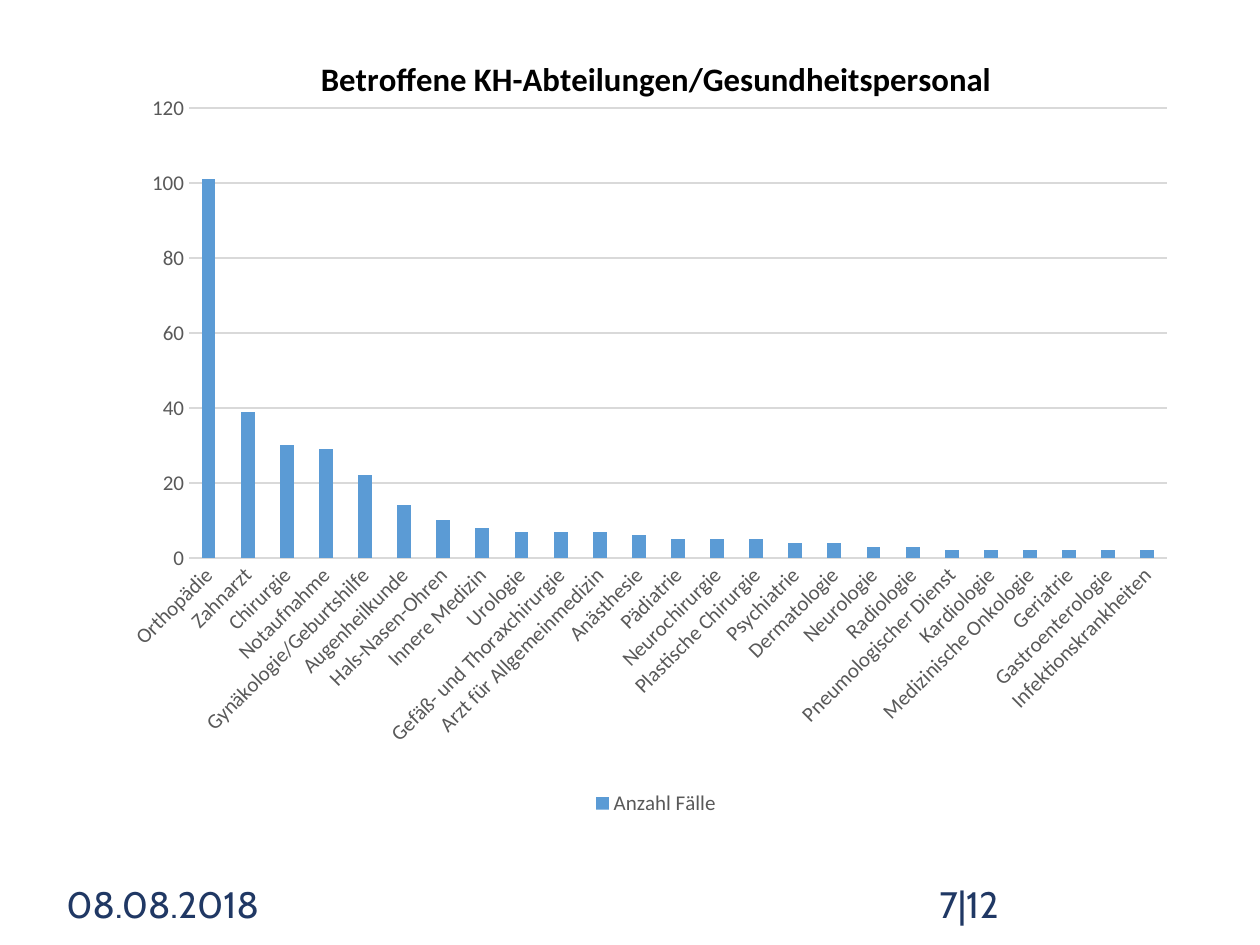
from dataclasses import dataclass

from lxml.etree import SubElement
from pptx import Presentation
from pptx.chart.data import CategoryChartData
from pptx.dml.color import RGBColor
from pptx.enum.chart import XL_CHART_TYPE, XL_LEGEND_POSITION, XL_TICK_MARK
from pptx.enum.text import MSO_ANCHOR
from pptx.oxml import parse_xml
from pptx.oxml.ns import nsdecls, qn
from pptx.util import Pt

EMU_PER_PX = 914400 / 126
CHART_WIDTH = 1140
CHART_HEIGHT = 793
NAVY = RGBColor(0x20, 0x38, 0x64)
BLUE = RGBColor(0x5B, 0x9B, 0xD5)
GRAY = RGBColor(0x59, 0x59, 0x59)
PALE = RGBColor(0xD9, 0xD9, 0xD9)
BLACK = RGBColor(0, 0, 0)

FOOTER_FONT = {"name": "Cabin", "size": Pt(21), "color": NAVY}
LABEL_FONT = {"name": "Calibri", "size": Pt(12), "color": GRAY}
TITLE_FONT = {"name": "Calibri", "size": Pt(18.7), "bold": True, "color": BLACK}

CASES = {
    "Orthopädie": 101,
    "Zahnarzt": 39,
    "Chirurgie": 30,
    "Notaufnahme": 29,
    "Gynäkologie/Geburtshilfe": 22,
    "Augenheilkunde": 14,
    "Hals-Nasen-Ohren": 10,
    "Innere Medizin": 8,
    "Urologie": 7,
    "Gefäß- und Thoraxchirurgie": 7,
    "Arzt für Allgemeinmedizin": 7,
    "Anästhesie": 6,
    "Pädiatrie": 5,
    "Neurochirurgie": 5,
    "Plastische Chirurgie": 5,
    "Psychiatrie": 4,
    "Dermatologie": 4,
    "Neurologie": 3,
    "Radiologie": 3,
    "Pneumologischer Dienst": 2,
    "Kardiologie": 2,
    "Medizinische Onkologie": 2,
    "Geriatrie": 2,
    "Gastroenterologie": 2,
    "Infektionskrankheiten": 2,
}


@dataclass(frozen=True)
class Footer:
    """A footer text and its left edge in px."""

    text: str
    left: int


FOOTERS = [Footer("08.08.2018", 54), Footer("7|12", 927)]


def px(length: int) -> int:
    """Turn px into EMU."""
    return round(length * EMU_PER_PX)


def format_font(font, values: dict) -> None:
    """Apply a dict of format values to a font."""
    for name, value in values.items():
        if name == "color":
            font.color.rgb = value
        else:
            setattr(font, name, value)


def add_footer(page, footer: Footer) -> None:
    """Add one footer text box."""
    box = page.shapes.add_textbox(px(footer.left), px(876), px(284), px(50))
    frame = box.text_frame
    frame.word_wrap = True
    frame.vertical_anchor = MSO_ANCHOR.TOP
    span = frame.paragraphs[0].add_run()
    span.text = footer.text
    format_font(span.font, FOOTER_FONT)


def set_layout(parent, index: int, lengths: dict[str, int]) -> None:
    """Place a chart part by lengths in px within the chart."""
    for old in parent.findall(qn("c:layout")):
        parent.remove(old)
    layout = parse_xml(f"<c:layout {nsdecls('c')}><c:manualLayout/></c:layout>")
    values = {"layoutTarget": "inner"} if "w" in lengths else {}
    values |= {"xMode": "edge", "yMode": "edge"}
    for name, length in lengths.items():
        values[name] = length / (CHART_WIDTH if name in "xw" else CHART_HEIGHT)
    for name, value in values.items():
        SubElement(layout[0], qn(f"c:{name}")).set("val", str(value))
    parent.insert(index, layout)


def format_axes(chart) -> None:
    """Format both axes, the gridlines and the slanted labels."""
    for axis in (chart.category_axis, chart.value_axis):
        axis.major_tick_mark = axis.minor_tick_mark = XL_TICK_MARK.NONE
        format_font(axis.tick_labels.font, LABEL_FONT)
    chart.value_axis.maximum_scale = 120
    chart.value_axis.minimum_scale = 0
    chart.value_axis.major_unit = 20
    chart.value_axis.has_major_gridlines = True
    chart.value_axis.format.line.fill.background()
    for line in (chart.category_axis.format.line, chart.value_axis.major_gridlines.format.line):
        line.color.rgb = PALE
        line.width = Pt(0.75)
    labels = chart.category_axis._element.find(qn("c:txPr"))
    labels.find(qn("a:bodyPr")).set("rot", "-2700000")


def add_case_chart(page) -> None:
    """Add the column chart of cases per department."""
    data = CategoryChartData()
    data.categories = list(CASES)
    data.add_series("Anzahl Fälle", list(CASES.values()))
    chart = page.shapes.add_chart(
        XL_CHART_TYPE.COLUMN_CLUSTERED, px(86), px(28), px(CHART_WIDTH), px(CHART_HEIGHT), data
    ).chart
    format_font(chart.font, {"name": "Calibri", "size": Pt(10), "color": BLACK})

    chart.has_title = True
    para = chart.chart_title.text_frame.paragraphs[0]
    span = para.add_run()
    span.text = "Betroffene KH-Abteilungen/Gesundheitspersonal"
    format_font(span.font, TITLE_FONT)
    set_layout(chart.chart_title._element, 1, {"x": 229, "y": 22})

    plot = chart.plots[0]
    plot.gap_width = 182
    plot.vary_by_categories = False
    fill = plot.series[0].format.fill
    fill.solid()
    fill.fore_color.rgb = BLUE
    format_axes(chart)
    plot_area = chart._chartSpace.chart.plotArea
    set_layout(plot_area, 0, {"x": 103, "y": 80, "w": 978, "h": 450})

    chart.has_legend = True
    chart.legend.position = XL_LEGEND_POSITION.BOTTOM
    chart.legend.include_in_layout = False
    format_font(chart.legend.font, LABEL_FONT)


def main() -> None:
    """Build and save the slide."""
    deck = Presentation()
    deck.slide_width, deck.slide_height = px(1260), px(945)
    page = deck.slides.add_slide(deck.slide_layouts[6])
    for footer in FOOTERS:
        add_footer(page, footer)
    add_case_chart(page)
    deck.save("out.pptx")


if __name__ == "__main__":
    main()
